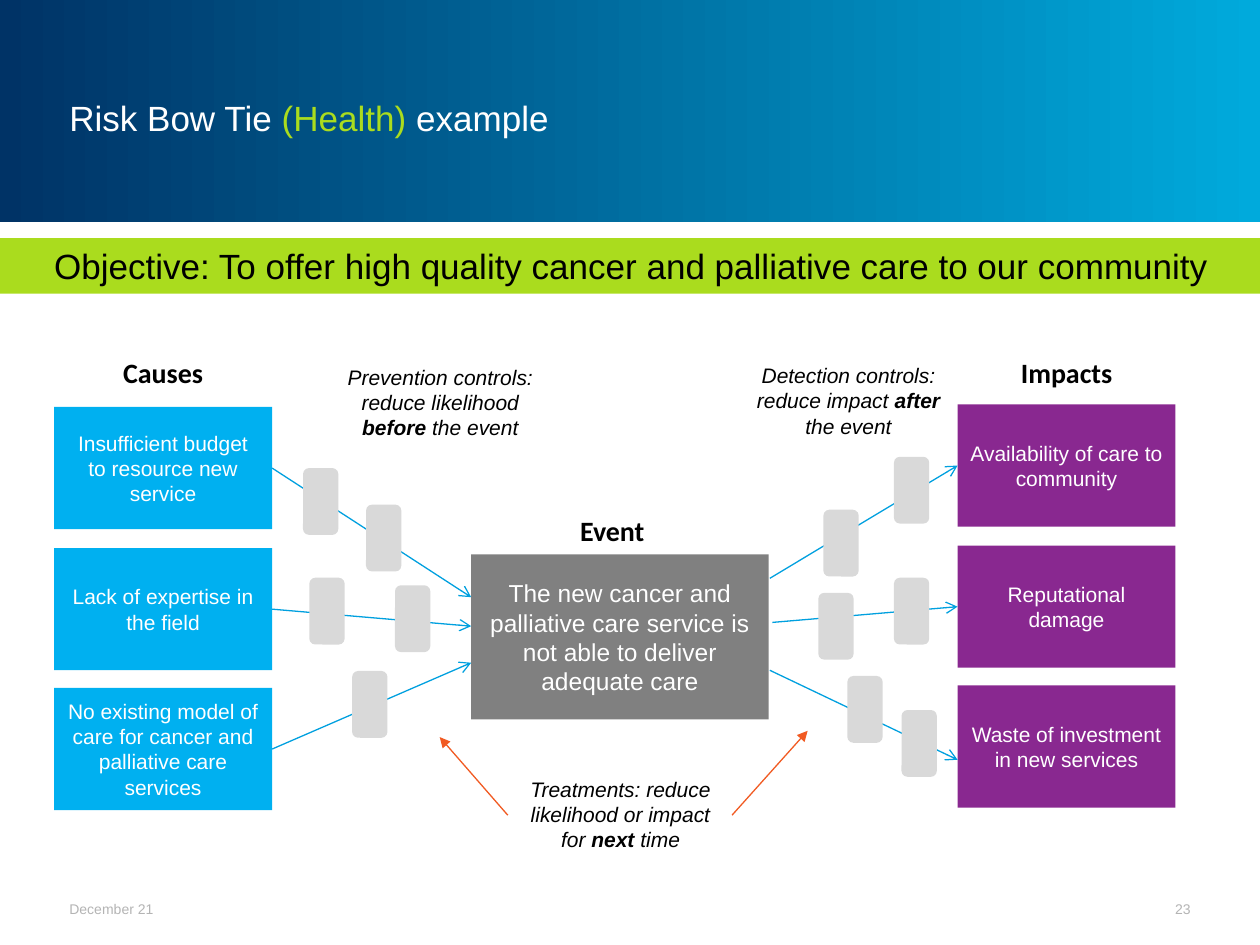
from lxml.etree import SubElement
from pptx import Presentation
from pptx.dml.color import RGBColor
from pptx.enum.shapes import MSO_CONNECTOR, MSO_SHAPE
from pptx.enum.text import MSO_ANCHOR, PP_ALIGN
from pptx.oxml.ns import qn
from pptx.util import Pt

PX = 9144  # EMU per px, 100 px to the inch
COLORS = {
    "navy": "003366", "cyan": "00AADC", "lime": "AADC1E", "cause": "00B0F0",
    "impact": "892890", "event": "808080", "control": "D9D9D9",
    "link": "00A0DF", "treatment": "F15A22", "footer": "B4B4B4",
    "white": "FFFFFF", "black": "000000",
}
BOX_W, BOX_H, BOX_PITCH = 173, 97, 111.5
CONTROL_W, CONTROL_H = 53, 28
HEADING = {"size": 16, "name": "Calibri", "bold": True}
NOTE = {"size": 12, "italic": True}
FOOTER = {"size": 8, "color": "footer"}


def emu(*lengths):
    return [round(length * PX) for length in lengths]


def rgb(color):
    return RGBColor.from_string(COLORS[color])


def write(shape, runs, font, align=PP_ALIGN.CENTER, anchor=MSO_ANCHOR.TOP,
          margins=(10, 5, 10, 5)):
    """Fill a shape with one paragraph of (text, font overrides) runs."""
    frame = shape.text_frame
    left, top, right, bottom = emu(*margins)
    layout = {"word_wrap": True, "vertical_anchor": anchor, "margin_left": left,
              "margin_top": top, "margin_right": right, "margin_bottom": bottom}
    for key, value in layout.items():
        setattr(frame, key, value)
    paragraph = frame.paragraphs[0]
    paragraph.alignment = align
    for text, override in runs:
        run = paragraph.add_run()
        run.text = text
        style = {"name": "Arial", "color": "black", **font, **override}
        run.font.color.rgb = rgb(style.pop("color"))
        style["size"] = Pt(style["size"])
        for key, value in style.items():
            setattr(run.font, key, value)


def add_label(slide, box, runs, font, **layout):
    write(slide.shapes.add_textbox(*emu(*box)), runs, font, **layout)


def add_block(slide, box, color, kind=MSO_SHAPE.RECTANGLE):
    block = slide.shapes.add_shape(kind, *emu(*box))
    block.shadow.inherit = False
    block.line.fill.background()
    block.fill.solid()
    block.fill.fore_color.rgb = rgb(color)
    return block


def add_arrow(slide, start, end, color, head):
    arrow = slide.shapes.add_connector(MSO_CONNECTOR.STRAIGHT, *emu(*start, *end))
    arrow.line.color.rgb = rgb(color)
    arrow.line.width = Pt(0.75)
    SubElement(arrow.line._get_or_add_ln(), qn("a:tailEnd"), type=head)
    SubElement(arrow._element.spPr, qn("a:effectLst"))
    return arrow


def add_header(slide, box):
    left, top, width, height = box
    band = add_block(slide, box, "navy")
    band.fill.gradient()
    band.fill.gradient_angle = 0
    for stop, color, position in zip(band.fill.gradient_stops, ("navy", "cyan"), (0, 1)):
        stop.color.rgb = rgb(color)
        stop.position = position
    slide.shapes._spTree.insert(2, band._element)  # behind the title

    title = slide.shapes.title
    title.left, title.top, title.width, title.height = emu(left + 51, top + 30, 748, 126)
    write(title, [("Risk Bow Tie ", {}), ("(Health) ", {"color": "lime"}), ("example", {})],
          {"size": 20, "color": "white"}, align=PP_ALIGN.LEFT,
          anchor=MSO_ANCHOR.MIDDLE, margins=(4, 4, 4, 4))


def add_objective(slide, box):
    objective = "Objective: To offer high quality cancer and palliative care to our community"
    write(add_block(slide, box, "lime"), [(objective, {})], {"size": 20},
          align=PP_ALIGN.LEFT, margins=(43, 5, 10, 5))


def add_column(slide, left, top, heading, heading_box, texts, color):
    """Stack equal boxes under a heading and return them."""
    x, y, width, height = heading_box
    add_label(slide, (left + x, top + y, width, height), [(heading, {})], HEADING)
    blocks = []
    for row, text in enumerate(texts):
        block = add_block(slide, (left, top + round(row * BOX_PITCH), BOX_W, BOX_H), color)
        write(block, [(text, {})], {"size": 12, "color": "white"},
              anchor=MSO_ANCHOR.MIDDLE, margins=(10, 8, 10, 8))
        blocks.append(block)
    return blocks


def add_event(slide, left, top):
    event = add_block(slide, (left, top, 236, 131), "event")
    text = "The new cancer and palliative care service is not able to deliver adequate care"
    write(event, [(text, {})], {"size": 14, "color": "white"},
          anchor=MSO_ANCHOR.MIDDLE, margins=(0, 0, 0, 0))
    add_label(slide, (left + 59, top - 37, 106, 37), [("Event", {})], HEADING)


def add_cause_links(slide, causes, left, top):
    for cause, y in zip(causes, (34, 57, 86)):
        tip = (left, top + y)
        link = add_arrow(slide, tip, tip, "link", "arrow")
        link.begin_connect(cause, 3)


def add_impact_links(slide, impacts, left, top):
    starts = ((1, 19), (3, 54), (1, 92))
    for impact, (x, y) in zip(impacts, starts):
        link = add_arrow(slide, (left + x, top + y), (left + 150, top + 163),
                         "link", "arrow")
        if impact is not impacts[-1]:  # the last link lands below the middle
            link.end_connect(impact, 1)


def add_controls(slide, left, top, note_box, runs, spots):
    x, y, width, height = note_box
    add_label(slide, (left + x, top + y, width, height), runs, NOTE)
    for x, y in spots:
        control = add_block(slide, (left + x, top + y, CONTROL_W, CONTROL_H), "control",
                            MSO_SHAPE.ROUNDED_RECTANGLE)
        control.rotation = 270


def add_treatments(slide, left, top):
    runs = [("Treatments: reduce likelihood or impact for ", {}),
            ("next", {"bold": True}), (" time", {})]
    add_label(slide, (left, top, 179, 71), runs, NOTE)
    for start, end in (((0, 36), (-54, -26)), ((178, 36), (238, -31))):
        add_arrow(slide, (left + start[0], top + start[1]),
                  (left + end[0], top + end[1]), "treatment", "triangle")


def add_footer(slide, left, top, width):
    layout = {"anchor": MSO_ANCHOR.MIDDLE, "margins": (4, 4, 4, 4)}
    add_label(slide, (left, top, 157, 24), [("December 21", {})], FOOTER,
              align=PP_ALIGN.LEFT, **layout)
    add_label(slide, (left + width - 79, top, 79, 24), [("23", {})], FOOTER,
              align=PP_ALIGN.RIGHT, **layout)


def main():
    deck = Presentation()
    deck.slide_width, deck.slide_height = emu(1000, 750)
    slide = deck.slides.add_slide(deck.slide_layouts[5])

    add_header(slide, (0, 0, 1000, 176))
    add_objective(slide, (0, 189, 1000, 44))

    # Bow tie: causes, event, impacts
    causes = add_column(slide, 43, 323, "Causes", (20, -46, 133, 37), [
        "Insufficient budget to resource new service",
        "Lack of expertise in the field",
        "No existing model of care for cancer and palliative care services",
    ], "cause")
    impacts = add_column(slide, 760, 321, "Impacts", (17, -44, 139, 37), [
        "Availability of care to community",
        "Reputational damage",
        "Waste of investment in new services",
    ], "impact")
    add_event(slide, 374, 440)
    add_cause_links(slide, causes, 374, 440)
    add_impact_links(slide, impacts, 610, 440)

    # Controls on either side of the event
    add_controls(slide, 228, 284, (32, 0, 179, 71),
                 [("Prevention controls: reduce likelihood ", {}),
                  ("before", {"bold": True}), (" the event", {})],
                 [(0, 100), (50, 129), (5, 187), (39, 261), (73, 193)])
    add_controls(slide, 587, 283, (0, 0, 173, 71),
                 [("Detection controls: reduce impact ", {}),
                  ("after", {"bold": True}), (" the event", {})],
                 [(54, 134), (110, 188), (73, 266), (50, 200), (116, 293), (110, 92)])

    add_treatments(slide, 403, 611)
    add_footer(slide, 51, 709, 898)
    deck.save("out.pptx")


if __name__ == "__main__":
    main()
